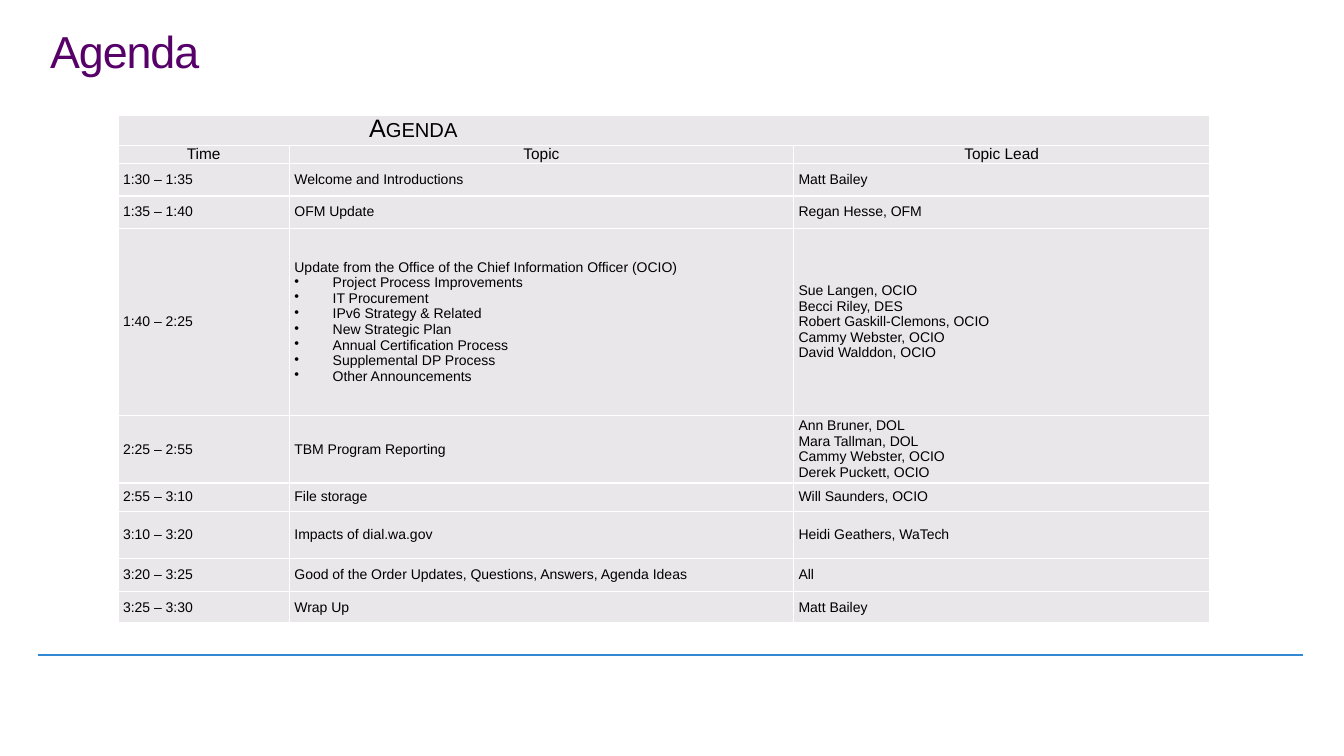
from pptx import Presentation
from pptx.dml.color import RGBColor
from pptx.enum.shapes import MSO_CONNECTOR
from pptx.enum.text import MSO_ANCHOR, PP_ALIGN
from pptx.oxml.ns import qn
from pptx.util import Inches, Pt
from lxml.etree import SubElement

# Content: time, topic lines, lead lines; lines starting with a bullet are list items
TITLE = "Agenda"
HEADERS = ("Time", "Topic", "Topic Lead")
SESSIONS = [
    ("1:30 – 1:35", ["Welcome and Introductions"], ["Matt Bailey"]),
    ("1:35 – 1:40", ["OFM Update"], ["Regan Hesse, OFM"]),
    ("1:40 – 2:25",
     ["Update from the Office of the Chief Information Officer (OCIO)",
      "•Project Process Improvements", "•IT Procurement",
      "•IPv6 Strategy & Related", "•New Strategic Plan",
      "•Annual Certification Process", "•Supplemental DP Process",
      "•Other Announcements"],
     ["Sue Langen, OCIO", "Becci Riley, DES", "Robert Gaskill-Clemons, OCIO",
      "Cammy Webster, OCIO", "David Walddon, OCIO"]),
    ("2:25 – 2:55", ["TBM Program Reporting"],
     ["Ann Bruner, DOL", "Mara Tallman, DOL", "Cammy Webster, OCIO",
      "Derek Puckett, OCIO"]),
    ("2:55 – 3:10", ["File storage"], ["Will Saunders, OCIO"]),
    ("3:10 – 3:20", ["Impacts of dial.wa.gov"], ["Heidi Geathers, WaTech"]),
    ("3:20 – 3:25",
     ["Good of the Order Updates, Questions, Answers, Agenda Ideas"], ["All"]),
    ("3:25 – 3:30", ["Wrap Up"], ["Matt Bailey"]),
]

# Grid and formats
COLS = (1.7, 5, 4.13)
ROWS = (0.28, 0.17, 0.32, 0.32, 1.86, 0.62, 0.28, 0.47, 0.33, 0.31)
TABLE_LEFT, TABLE_TOP = 1.17, 1.14
MARGINS = {"margin_left": Inches(0.05), "margin_right": Inches(0.05),
           "margin_top": 0, "margin_bottom": 0}
BANNER_INDENT, BULLET_INDENT = 2.44, 0.38


def color(value):
    return RGBColor.from_string(value)


def set_attrs(obj, values):
    for name, value in values.items():
        setattr(obj, name, value)


def add_run(p, text, size, fill="000000"):
    r = p.add_run()
    r.text = text
    set_attrs(r.font, {"name": "Arial", "size": Pt(size), "bold": False})
    r.font.color.rgb = color(fill)
    return r


def indent(p, left, first=0):
    pPr = p._p.get_or_add_pPr()
    pPr.set("marL", str(Inches(left)))
    pPr.set("indent", str(Inches(first)))
    return pPr


def fill_cell(cell, lines, size, align=PP_ALIGN.LEFT, anchor=MSO_ANCHOR.MIDDLE):
    set_attrs(cell, MARGINS | {"vertical_anchor": anchor})
    tf = cell.text_frame
    for i, line in enumerate(lines):
        p = tf.add_paragraph() if i else tf.paragraphs[0]
        p.alignment = align
        if line.startswith("•"):
            pPr = indent(p, BULLET_INDENT, -BULLET_INDENT)
            SubElement(pPr, qn("a:buChar")).set("char", "•")
        add_run(p, line.lstrip("•"), size)


def style_cell(cell):
    tcPr = cell._tc.get_or_add_tcPr()
    for side in ("lnL", "lnR", "lnT", "lnB"):
        ln = SubElement(tcPr, qn(f"a:{side}"), w=str(Pt(1)))
        SubElement(SubElement(ln, qn("a:solidFill")), qn("a:srgbClr"), val="FFFFFF")
    cell.fill.solid()
    cell.fill.fore_color.rgb = color("EAE7EB")


prs = Presentation()
set_attrs(prs, {"slide_width": Inches(13.33), "slide_height": Inches(7.5)})
s = prs.slides.add_slide(prs.slide_layouts[6])

# Footer rule
rule = s.shapes.add_connector(MSO_CONNECTOR.STRAIGHT, Inches(0.38), Inches(6.5),
                              Inches(12.92), Inches(6.5))
rule.line.color.rgb = color("3388D5")
rule.line.width = Pt(1.5)
SubElement(rule._element.spPr, qn("a:effectLst"))

# Title
tf = s.shapes.add_textbox(Inches(0.4), Inches(0.25), Inches(8.26), Inches(0.98)).text_frame
tf.word_wrap = True
p = tf.paragraphs[0]
p.line_spacing = 0.9
r = add_run(p, TITLE, 32, "580069")
r.font._element.set("spc", "-80")

# Agenda table
table = s.shapes.add_table(len(ROWS), len(COLS), Inches(TABLE_LEFT), Inches(TABLE_TOP),
                           Inches(sum(COLS)), Inches(sum(ROWS))).table
set_attrs(table, {"first_row": False, "horz_banding": False})
for column, width in zip(table.columns, COLS):
    column.width = Inches(width)
for row, height in zip(table.rows, ROWS):
    row.height = Inches(height)
for cell in table.iter_cells():
    style_cell(cell)

# Banner row
banner = table.cell(0, 0)
banner.merge(table.cell(0, len(COLS) - 1))
fill_cell(banner, [TITLE], 18, anchor=MSO_ANCHOR.TOP)
p = banner.text_frame.paragraphs[0]
indent(p, BANNER_INDENT)
p.runs[0].font._element.set("cap", "small")

# Column headings and sessions
for c, heading in enumerate(HEADERS):
    fill_cell(table.cell(1, c), [heading], 11, PP_ALIGN.CENTER, MSO_ANCHOR.TOP)
for n, (time, topics, leads) in enumerate(SESSIONS, 2):
    for c, lines in enumerate(([time], topics, leads)):
        fill_cell(table.cell(n, c), lines, 10)

prs.save("out.pptx")
